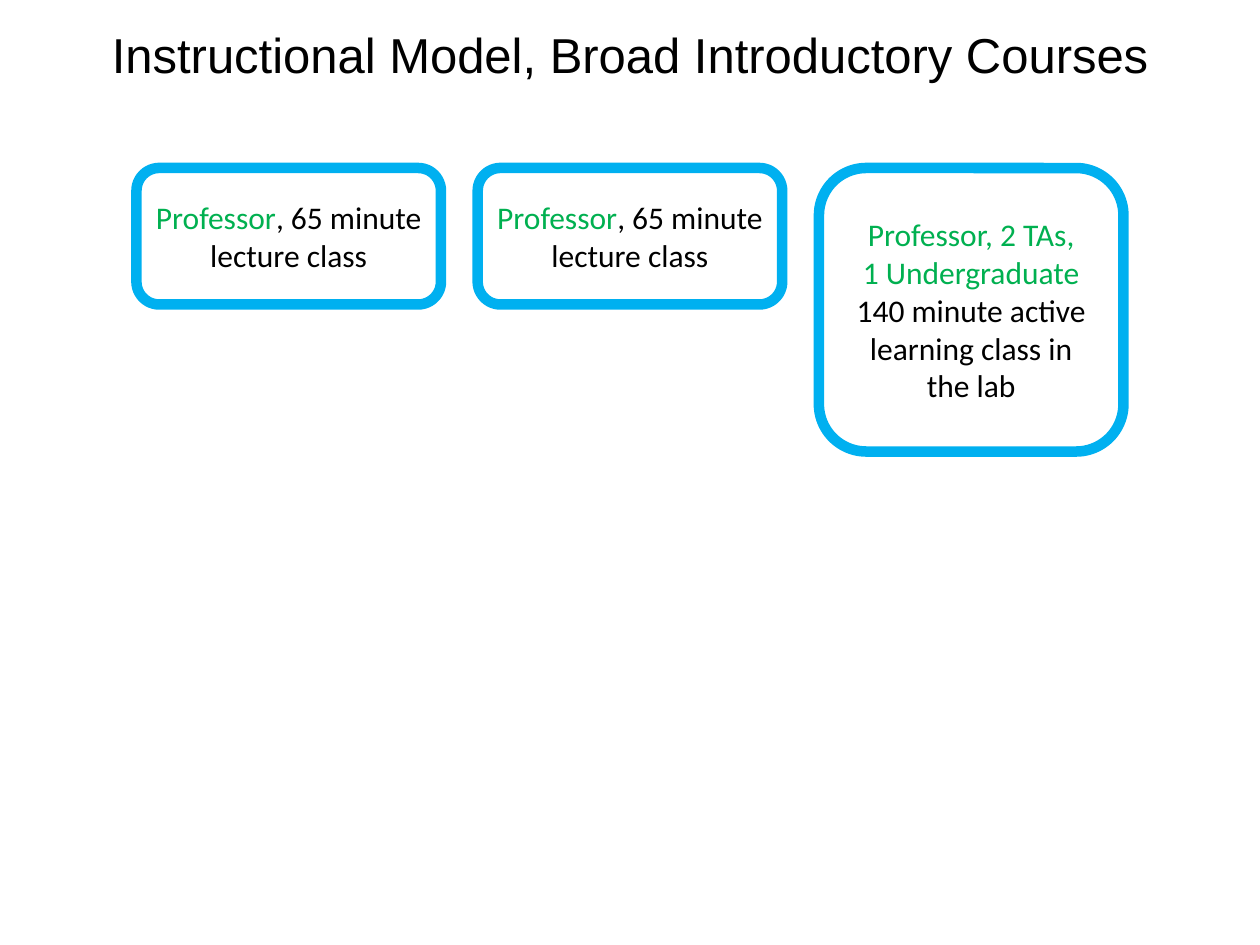
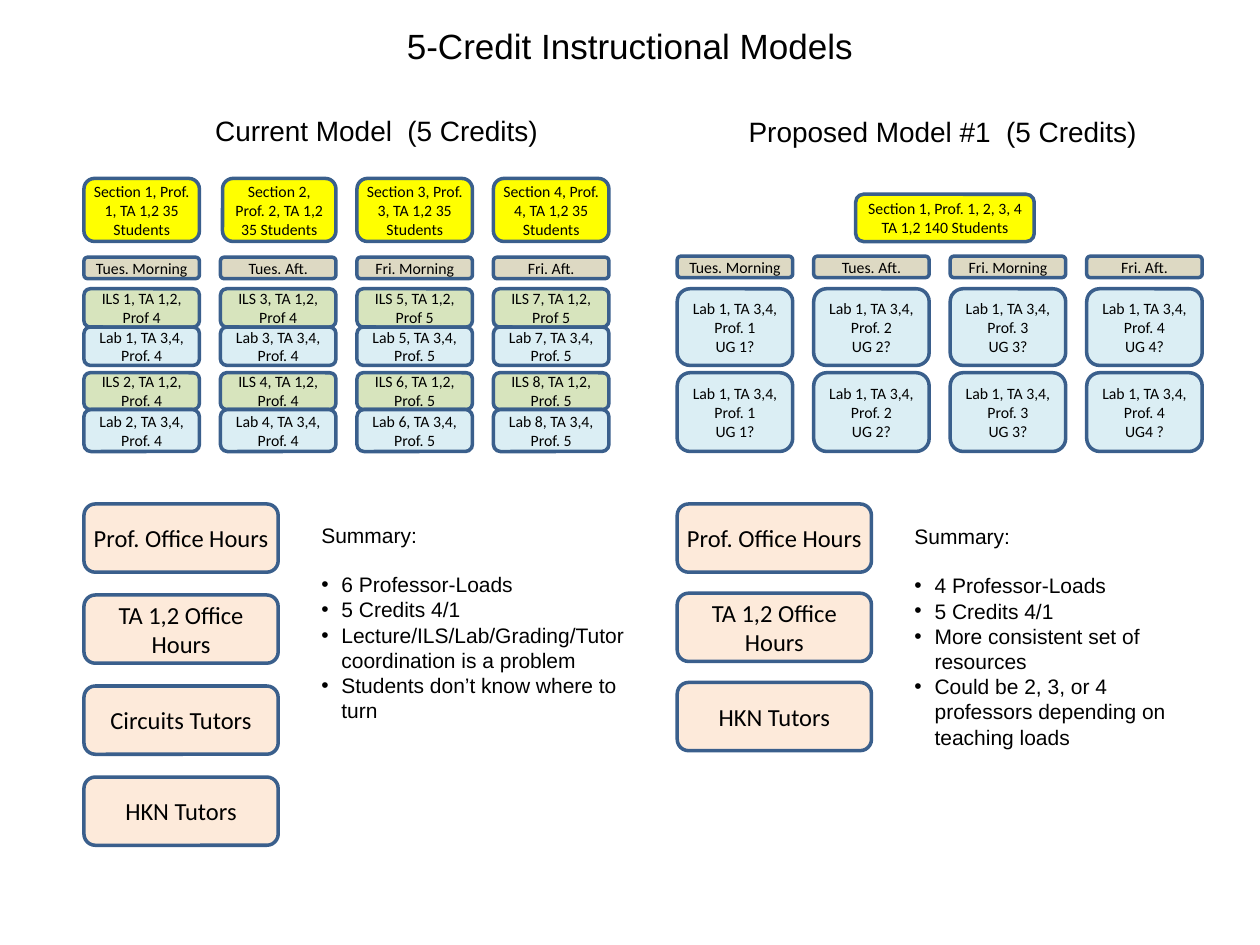
from dataclasses import dataclass
from typing import Any, NamedTuple

from lxml.etree import SubElement
from pptx import Presentation
from pptx.dml.color import RGBColor as Rgb
from pptx.enum.shapes import MSO_SHAPE as Preset
from pptx.enum.text import MSO_ANCHOR as Anchor, MSO_AUTO_SIZE as AutoSize, PP_ALIGN as Align
from pptx.oxml.ns import qn
from pptx.util import Inches, Pt

COLUMNS, ROWS = 120, 90
SLIDE_WIDTH, SLIDE_HEIGHT = Inches(10), Inches(7.5)


@dataclass(frozen=True)
class Theme:
    heading_font: str = "Arial"
    box_font: str = "Calibri"
    black: str = "000000"
    staff_green: str = "00B050"
    class_blue: str = "00B0F0"
    outline: str = "3A5F8C"
    section: str = "FFFF00"
    day: str = "DDD9C3"
    ils: str = "D7E4BD"
    lab: str = "DBEEF4"
    support: str = "FDEADA"
    title_size: float = 28
    small_title_size: float = 20
    model_size: float = 16
    summary_size: float = 12
    class_size: float = 18
    support_size: float = 14
    schedule_size: float = 9


THEME = Theme()
TIGHT = {"margin_left": Inches(0.05), "margin_right": Inches(0.05),
         "margin_top": Inches(0.03), "margin_bottom": Inches(0.03)}


class Area(NamedTuple):
    """Place and size in grid columns and rows."""
    column: float
    row: float
    width: float
    height: float

    def lengths(self) -> tuple[int, ...]:
        across, down = SLIDE_WIDTH / COLUMNS, SLIDE_HEIGHT / ROWS
        return (round(self.column * across), round(self.row * down),
                round(self.width * across), round(self.height * down))


class Piece(NamedTuple):
    text: str
    color: str = THEME.black


Line = list[Piece]


@dataclass(frozen=True)
class BoxStyle:
    size: float
    fill: str | None
    outline: str = THEME.outline
    line_width: float = 2
    tight: bool = True


@dataclass(frozen=True)
class Model:
    """One half of the comparison slide."""
    left: float
    heading: str
    heading_area: Area
    day_row: float
    support: tuple[str, ...]
    support_step: float
    summary_area: Area
    summary: tuple[str, ...]


CLASS = BoxStyle(THEME.class_size, None, THEME.class_blue, 6, tight=False)
SECTION = BoxStyle(THEME.schedule_size, THEME.section)
DAY = BoxStyle(THEME.schedule_size, THEME.day)
ILS = BoxStyle(THEME.schedule_size, THEME.ils, tight=False)
LAB = BoxStyle(THEME.schedule_size, THEME.lab, tight=False)
JOINT_LAB = BoxStyle(THEME.schedule_size, THEME.lab)
SUPPORT = BoxStyle(THEME.support_size, THEME.support)

DAYS = ("Tues. Morning", "Tues. Aft.", "Fri. Morning", "Fri. Aft.")
DAY_STEP, DAY_WIDTH = 13, 11
SESSION_ROWS = (27.5, 35.5)

CURRENT = Model(
    8, "Current Model  (5 Credits)", Area(19.9, 10.45, 32.4, 3.85), 24.5,
    ("Prof. Office Hours", "TA 1,2 Office Hours", "Circuits Tutors", "HKN Tutors"), 8.67,
    Area(30, 49.4, 32, 20),
    ("6 Professor-Loads", "5 Credits 4/1",
     "Lecture/ILS/Lab/Grading/Tutor coordination is a problem",
     "Students don’t know where to turn"))
PROPOSED = Model(
    64.5, "Proposed Model #1  (5 Credits)", Area(70.7, 10.5, 38.6, 3.85), 24.4,
    ("Prof. Office Hours", "TA 1,2 Office Hours", "HKN Tutors"), 8.5,
    Area(86.5, 49.5, 29, 22.4),
    ("4 Professor-Loads", "5 Credits 4/1", "More consistent set of resources",
     "Could be 2, 3, or 4 professors depending on teaching loads"))


def assign(target: Any, values: dict[str, Any]) -> None:
    for name, value in values.items():
        setattr(target, name, value)


def write(frame: Any, lines: list[Line], font: str, size: float, align: Align) -> None:
    for index, line in enumerate(lines):
        paragraph = frame.add_paragraph() if index else frame.paragraphs[0]
        paragraph.alignment = align
        for piece in line:
            run = paragraph.add_run()
            run.text = piece.text
            assign(run.font, {"name": font, "size": Pt(size)})
            run.font.color.rgb = Rgb.from_string(piece.color)


def add_text(slide: Any, area: Area, lines: list[str], size: float,
             align: Align = Align.LEFT, wrap: bool = True) -> Any:
    frame = slide.shapes.add_textbox(*area.lengths()).text_frame
    assign(frame, TIGHT | {"word_wrap": wrap, "auto_size": AutoSize.SHAPE_TO_FIT_TEXT})
    write(frame, [[Piece(line)] for line in lines], THEME.heading_font, size, align)
    return frame


def add_title(slide: Any, title: str, size: float, height: float) -> None:
    add_text(slide, Area(2, 2, COLUMNS - 4, height), [title], size, Align.CENTER)


def add_box(slide: Any, area: Area, style: BoxStyle, *lines: str | Line) -> None:
    shape = slide.shapes.add_shape(Preset.ROUNDED_RECTANGLE, *area.lengths())
    shape.shadow.inherit = False
    if style.fill:
        shape.fill.solid()
        shape.fill.fore_color.rgb = Rgb.from_string(style.fill)
    else:
        shape.fill.background()
    shape.line.color.rgb = Rgb.from_string(style.outline)
    shape.line.width = Pt(style.line_width)
    frame = shape.text_frame
    assign(frame, {"word_wrap": True, "vertical_anchor": Anchor.MIDDLE}
           | (TIGHT if style.tight else {}))
    pieces = [[Piece(line)] if isinstance(line, str) else line for line in lines]
    write(frame, pieces, THEME.box_font, style.size, Align.CENTER)


def add_bullet(paragraph: Any) -> None:
    properties = paragraph._p.get_or_add_pPr()
    indent = Inches(0.16)
    properties.set("marL", str(indent))
    properties.set("indent", str(-indent))
    SubElement(properties, qn("a:buFont")).set("typeface", THEME.heading_font)
    SubElement(properties, qn("a:buChar")).set("char", "•")


def add_model(slide: Any, model: Model) -> None:
    """Draw what both models share: heading, days, support boxes and summary."""
    add_text(slide, model.heading_area, [model.heading], THEME.model_size, wrap=False)
    for index, day in enumerate(DAYS):
        column = model.left + index * DAY_STEP
        add_box(slide, Area(column, model.day_row, DAY_WIDTH, 2.04), DAY, day)
    for index, support in enumerate(model.support):
        row = 48 + index * model.support_step
        add_box(slide, Area(model.left, row, 18.5, 6.5), SUPPORT, support)
    frame = add_text(slide, model.summary_area, ["Summary:", *model.summary],
                     THEME.summary_size)
    heading, *points = frame.paragraphs
    heading.space_after = Pt(THEME.summary_size * 1.15)
    for point in points:
        add_bullet(point)


def add_current_schedule(slide: Any) -> None:
    section_widths = (DAY_WIDTH, 10.8, DAY_WIDTH, DAY_WIDTH)
    for index, width in enumerate(section_widths):
        section = index + 1
        column = CURRENT.left + index * DAY_STEP
        add_box(slide, Area(column + DAY_WIDTH - width, 17, width, 6), SECTION,
                f"Section {section}, Prof. {section}, TA 1,2 35 Students")
        professor = 4 if index < 2 else 5
        sessions = zip(SESSION_ROWS, ("Prof", "Prof."), (3.65, 3.5), (3.65, 4))
        for number, (row, label, ils_height, lab_height) in enumerate(sessions, 2 * index + 1):
            add_box(slide, Area(column, row, DAY_WIDTH, ils_height), ILS,
                    f"ILS {number}, TA 1,2, {label} {professor}")
            add_box(slide, Area(column, row + ils_height, DAY_WIDTH, lab_height), LAB,
                    f"Lab {number}, TA 3,4, Prof. {professor}")


def add_proposed_schedule(slide: Any) -> None:
    add_box(slide, Area(81.5, 18.5, 17, 4.5), SECTION,
            "Section 1, Prof. 1, 2, 3, 4 TA 1,2 140 Students")
    assistants = (("UG 1?", "UG 1?"), ("UG 2?", "UG 2?"),
                  ("UG 3?", "UG 3?"), ("UG 4?", "UG4 ?"))
    for index, day_assistants in enumerate(assistants):
        column = PROPOSED.left + index * DAY_STEP
        for row, height, assistant in zip(SESSION_ROWS, (7.3, 7.5), day_assistants):
            add_box(slide, Area(column, row, DAY_WIDTH, height), JOINT_LAB,
                    f"Lab 1, TA 3,4, Prof. {index + 1}", assistant)


def build_introductory_slide(slide: Any) -> None:
    add_title(slide, "Instructional Model, Broad Introductory Courses", THEME.title_size, 6.2)
    lecture = [[Piece("Professor", THEME.staff_green), Piece(", 65 minute lecture class")]]
    active = [[Piece("Professor, 2 TAs,", THEME.staff_green)],
              [Piece("1 Undergraduate", THEME.staff_green)],
              [Piece("140 minute active learning class in the lab")]]
    for index, (lines, height) in enumerate(((lecture, 13), (lecture, 13), (active, 27))):
        add_box(slide, Area(13 + index * 32.5, 16, 29, height), CLASS, *lines)


def build_comparison_slide(slide: Any) -> None:
    add_title(slide, "5-Credit Instructional Models", THEME.small_title_size, 4.7)
    add_current_schedule(slide)
    add_proposed_schedule(slide)
    for model in (CURRENT, PROPOSED):
        add_model(slide, model)


def main() -> None:
    presentation = Presentation()
    assign(presentation, {"slide_width": SLIDE_WIDTH, "slide_height": SLIDE_HEIGHT})
    blank = presentation.slide_layouts[6]
    for build in (build_introductory_slide, build_comparison_slide):
        build(presentation.slides.add_slide(blank))
    presentation.save("out.pptx")


if __name__ == "__main__":
    main()
